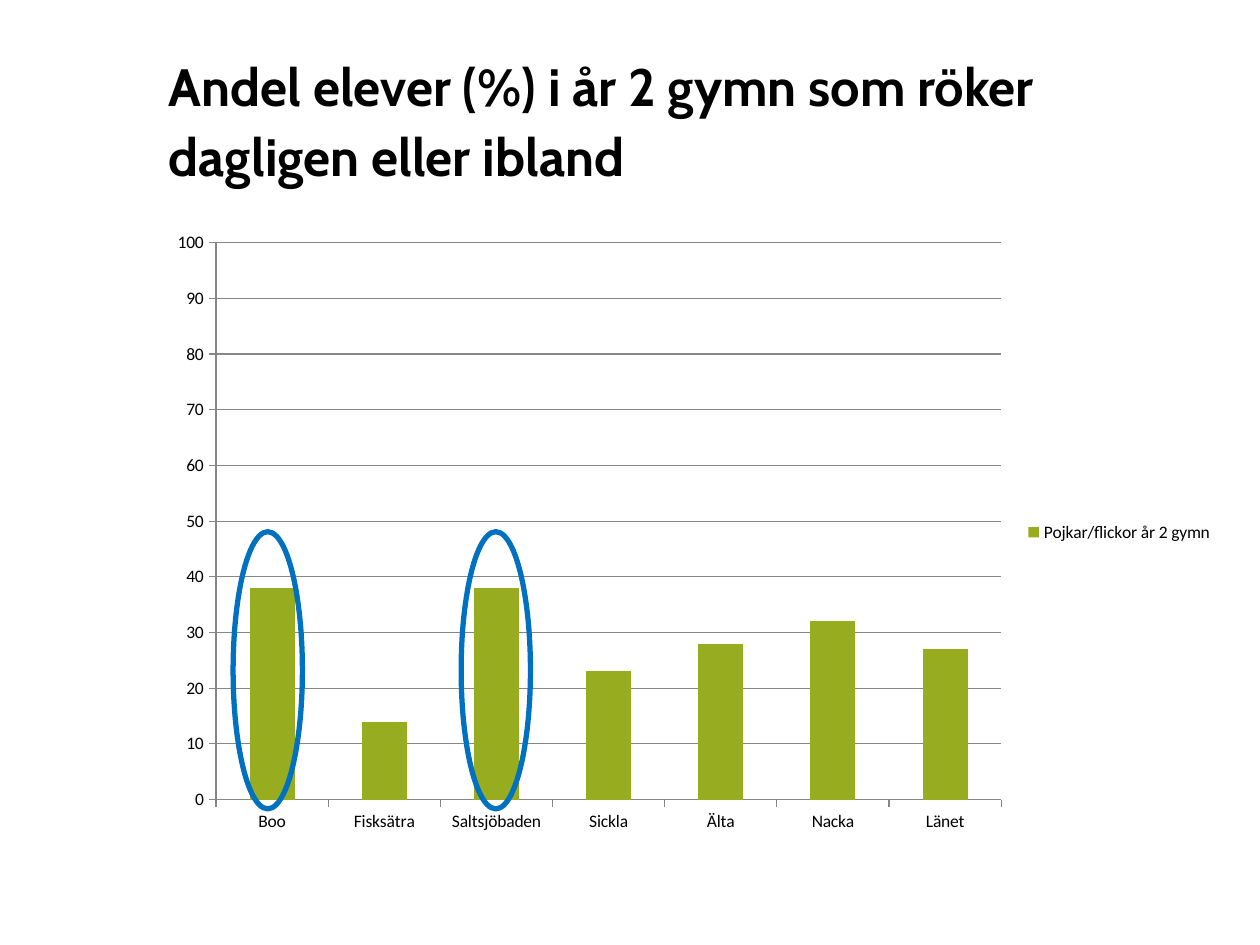
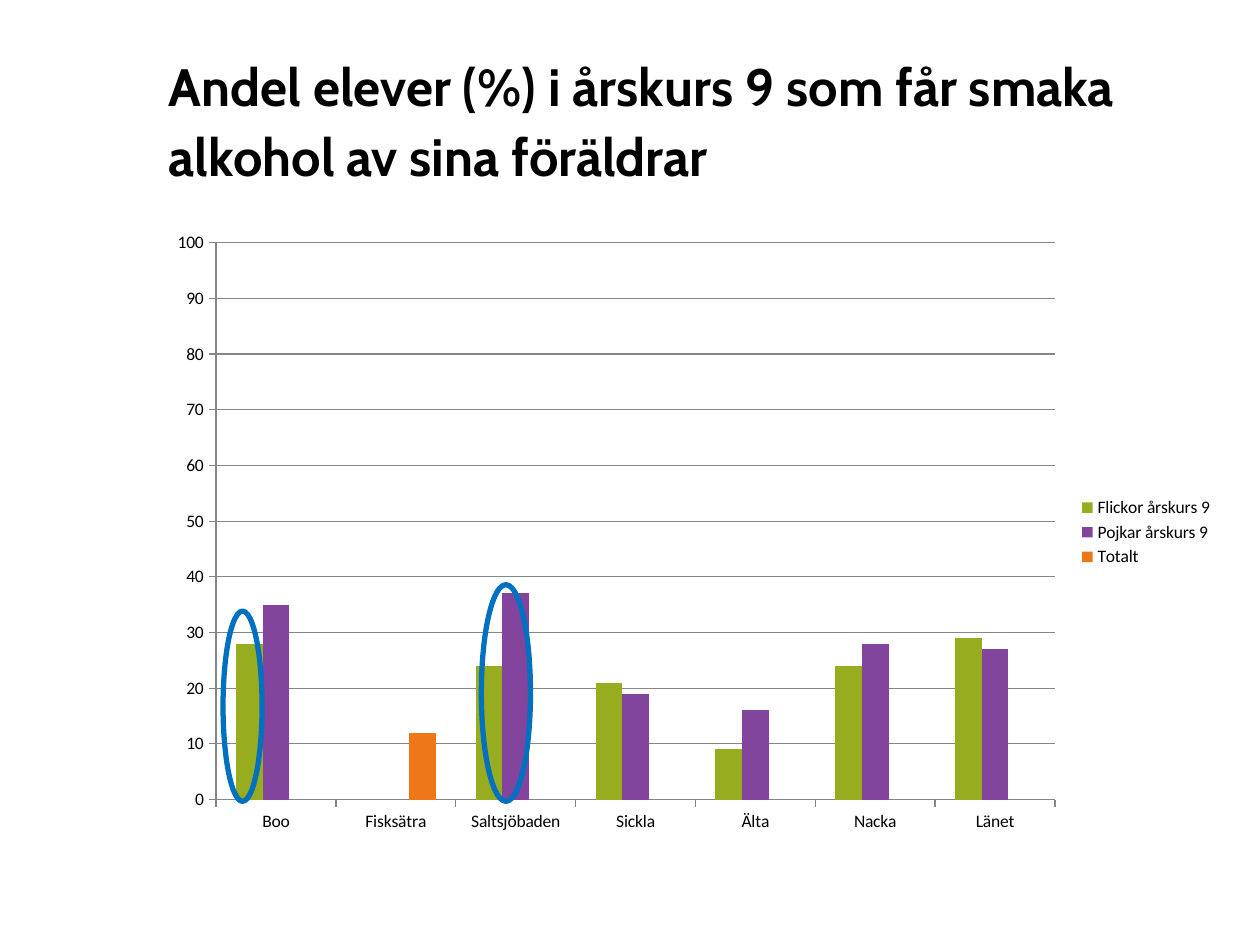
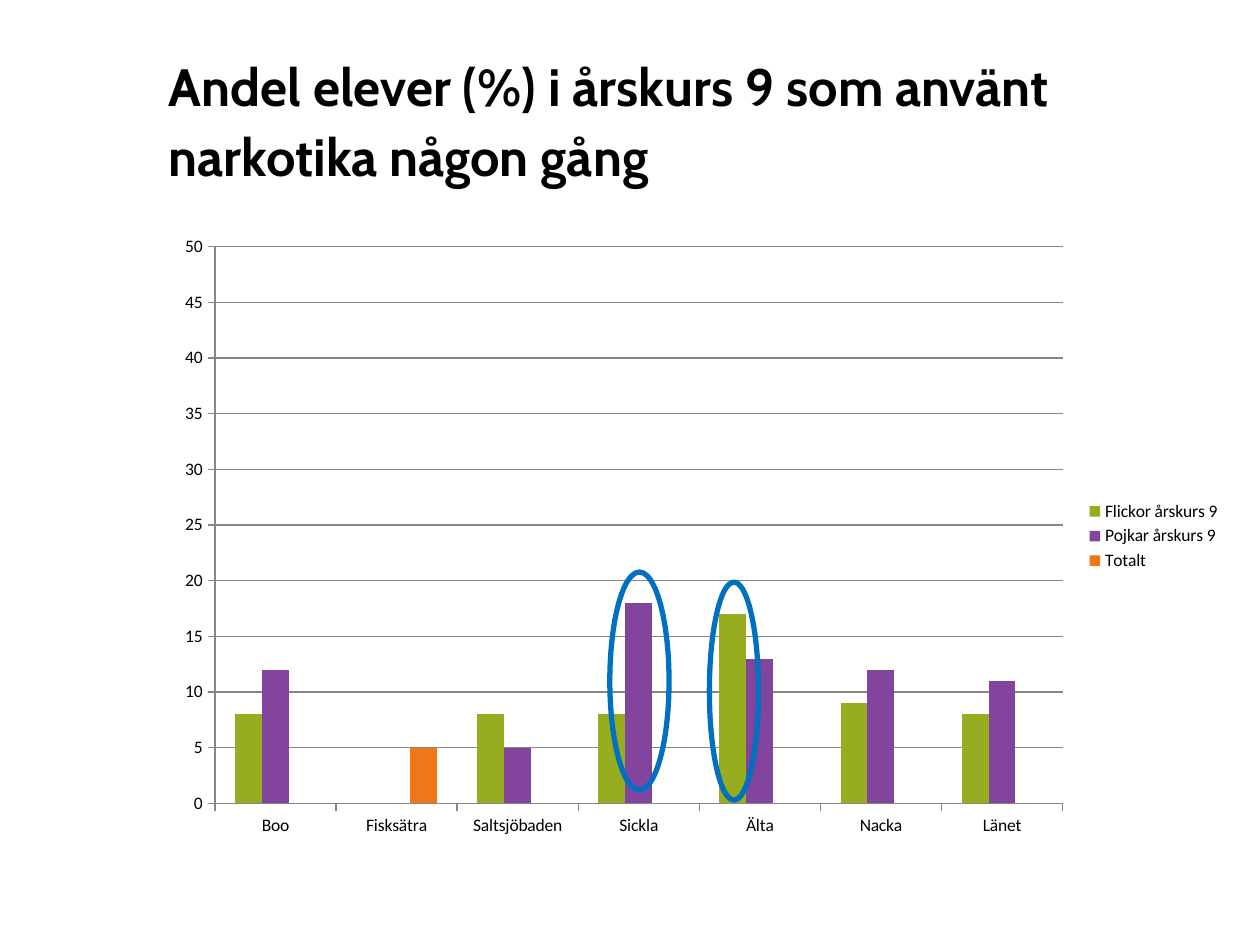
"""Build three slides of school survey charts with the notable bars circled."""

from dataclasses import dataclass

from pptx import Presentation
from pptx.chart.data import CategoryChartData
from pptx.dml.color import RGBColor
from pptx.enum.chart import XL_CHART_TYPE, XL_LEGEND_POSITION, XL_TICK_MARK
from pptx.enum.shapes import MSO_SHAPE
from pptx.enum.text import MSO_ANCHOR, MSO_AUTO_SIZE, PP_ALIGN
from pptx.presentation import Presentation as Deck
from pptx.slide import Slide
from pptx.util import Inches, Pt


@dataclass(frozen=True)
class Theme:
    title_font: str = "Cabin"
    chart_font: str = "Calibri"
    title_size: Pt = Pt(30)
    title_spacing: Pt = Pt(40)
    chart_size: Pt = Pt(10)
    grid_width: Pt = Pt(0.75)
    ring_width: Pt = Pt(3)
    text: RGBColor = RGBColor(0x00, 0x00, 0x00)
    grid: RGBColor = RGBColor(0x86, 0x86, 0x86)
    ring: RGBColor = RGBColor(0x00, 0x70, 0xC0)
    green: RGBColor = RGBColor(0x97, 0xAC, 0x1E)
    purple: RGBColor = RGBColor(0x83, 0x44, 0x9D)
    orange: RGBColor = RGBColor(0xF0, 0x77, 0x17)


@dataclass(frozen=True)
class Box:
    left: float
    top: float
    width: float
    height: float

    def lengths(self) -> tuple[Inches, Inches, Inches, Inches]:
        return (Inches(self.left), Inches(self.top),
                Inches(self.width), Inches(self.height))


@dataclass(frozen=True)
class Group:
    name: str
    shares: tuple[int | None, ...]
    color: RGBColor


@dataclass(frozen=True)
class Survey:
    question: str
    groups: tuple[Group, ...]
    axis_max: int
    rings: tuple[Box, ...]
    chart_box: Box = Box(1.24, 1.75, 8.49, 4.95)


THEME = Theme()
TITLE_BOX = Box(1.24, 0.3, 8.49, 1.25)
AREAS = ("Boo", "Fisksätra", "Saltsjöbaden", "Sickla", "Älta", "Nacka", "Länet")
AXIS_STEPS = 10


def grade_nine(girls: tuple[int | None, ...], boys: tuple[int | None, ...],
               fisksatra_total: int) -> tuple[Group, ...]:
    totals = tuple(fisksatra_total if area == "Fisksätra" else None for area in AREAS)
    return (Group("Flickor årskurs 9", girls, THEME.green),
            Group("Pojkar årskurs 9", boys, THEME.purple),
            Group("Totalt", totals, THEME.orange))


SURVEYS = (
    Survey(
        "Andel elever (%) i år 2 gymn som röker dagligen eller ibland",
        (Group("Pojkar/flickor år 2 gymn", (38, 14, 38, 23, 28, 32, 27), THEME.green),),
        100,
        (Box(3.66, 4.22, 0.55, 2.2), Box(1.85, 4.22, 0.55, 2.2)),
    ),
    Survey(
        "Andel elever (%) i årskurs 9 som får smaka alkohol av sina föräldrar",
        grade_nine((28, None, 24, 21, 9, 24, 29), (35, None, 37, 19, 16, 28, 27), 12),
        100,
        (Box(3.82, 4.64, 0.39, 1.72), Box(1.77, 4.85, 0.31, 1.51)),
    ),
    Survey(
        "Andel elever (%) i årskurs 9 som använt narkotika någon gång",
        grade_nine((8, None, 8, 8, 17, 9, 8), (12, None, 5, 18, 13, 12, 11), 5),
        50,
        (Box(4.84, 4.54, 0.47, 1.73), Box(5.63, 4.62, 0.39, 1.73)),
        Box(1.3, 1.78, 8.49, 4.95),
    ),
)


def write_title(slide: Slide, question: str) -> None:
    title = slide.shapes.title
    title.left, title.top, title.width, title.height = TITLE_BOX.lengths()
    frame = title.text_frame
    frame.word_wrap = True
    frame.auto_size = MSO_AUTO_SIZE.NONE
    frame.vertical_anchor = MSO_ANCHOR.MIDDLE
    paragraph = frame.paragraphs[0]
    paragraph.alignment = PP_ALIGN.LEFT
    paragraph.line_spacing = THEME.title_spacing
    run = paragraph.add_run()
    run.text = question
    run.font.name = THEME.title_font
    run.font.size = THEME.title_size
    run.font.bold = True
    run.font.color.rgb = THEME.text


def draw_chart(slide: Slide, survey: Survey) -> None:
    shares = CategoryChartData()
    shares.categories = AREAS
    for group in survey.groups:
        shares.add_series(group.name, group.shares)
    chart = slide.shapes.add_chart(
        XL_CHART_TYPE.COLUMN_CLUSTERED, *survey.chart_box.lengths(), shares).chart
    chart.has_title = False
    chart.font.name = THEME.chart_font
    chart.font.size = THEME.chart_size
    chart.font.color.rgb = THEME.text
    chart.has_legend = True
    chart.legend.position = XL_LEGEND_POSITION.RIGHT
    chart.legend.include_in_layout = False

    plot = chart.plots[0]
    plot.gap_width = 150
    plot.overlap = 0
    plot.vary_by_categories = False
    for series, group in zip(plot.series, survey.groups):
        series.format.fill.solid()
        series.format.fill.fore_color.rgb = group.color

    share_axis = chart.value_axis
    share_axis.minimum_scale = 0
    share_axis.maximum_scale = survey.axis_max
    share_axis.major_unit = survey.axis_max / AXIS_STEPS
    share_axis.has_major_gridlines = True
    for axis in (share_axis, chart.category_axis):
        axis.major_tick_mark = XL_TICK_MARK.OUTSIDE
        axis.minor_tick_mark = XL_TICK_MARK.NONE
    for lined in (share_axis, chart.category_axis, share_axis.major_gridlines):
        lined.format.line.color.rgb = THEME.grid
        lined.format.line.width = THEME.grid_width


def draw_ring(slide: Slide, box: Box) -> None:
    ring = slide.shapes.add_shape(MSO_SHAPE.OVAL, *box.lengths())
    ring.shadow.inherit = False
    ring.fill.background()
    ring.line.color.rgb = THEME.ring
    ring.line.width = THEME.ring_width


def add_survey_slide(deck: Deck, survey: Survey) -> None:
    slide = deck.slides.add_slide(deck.slide_layouts.get_by_name("Title Only"))
    write_title(slide, survey.question)
    draw_chart(slide, survey)
    for box in survey.rings:
        draw_ring(slide, box)


def main() -> None:
    deck = Presentation()
    deck.slide_width, deck.slide_height = Inches(10), Inches(7.5)
    for survey in SURVEYS:
        add_survey_slide(deck, survey)
    deck.save("out.pptx")


if __name__ == "__main__":
    main()
